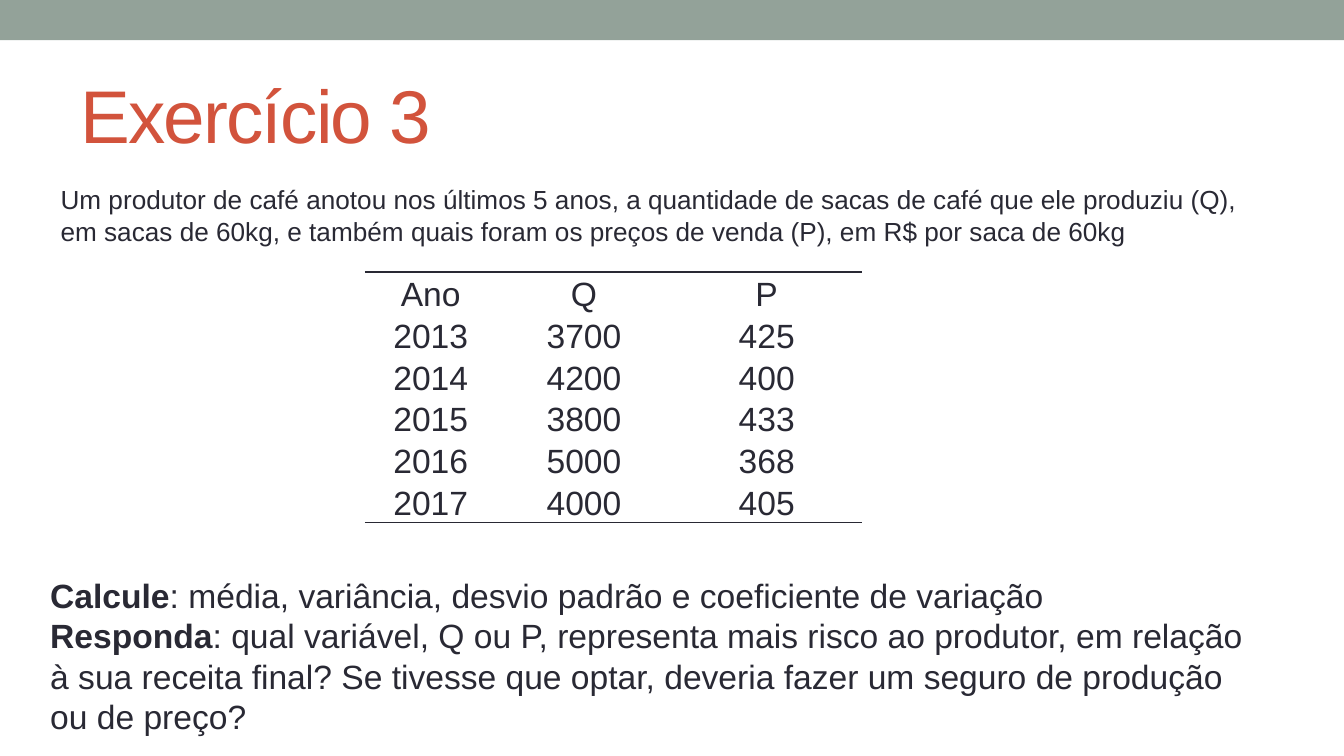
"""Build the coffee grower statistics exercise slide."""
from lxml.etree import SubElement
from pptx import Presentation
from pptx.dml.color import RGBColor as Rgb
from pptx.enum.shapes import MSO_SHAPE as Shape
from pptx.enum.text import MSO_ANCHOR as Anchor, PP_ALIGN as Align
from pptx.oxml import parse_xml
from pptx.oxml.ns import nsdecls, qn
from pptx.util import Inches, Pt

WIDE = Inches(10)
HIGH = WIDE * 9 // 16
INK, RUST, SAGE = "292934", "D2533C", "93A299"
PLAIN = "{2D5ABB26-0587-4C30-8999-92F81FD0307C}"
DATA = [
    ("Ano", "Q", "P"),
    ("2013", "3700", "425"),
    ("2014", "4200", "400"),
    ("2015", "3800", "433"),
    ("2016", "5000", "368"),
    ("2017", "4000", "405"),
]
INTRO = (
    "Um produtor de café anotou nos últimos 5 anos, a quantidade de sacas de "
    "café que ele produziu (Q), em sacas de 60kg, e também quais foram os "
    "preços de venda (P), em R$ por saca de 60kg"
)
TASKS = [
    ("Calcule", ": média, variância, desvio padrão e coeficiente de variação"),
    ("Responda", ": qual variável, Q ou P, representa mais risco ao produtor, "
     "em relação à sua receita final? Se tivesse que optar, deveria fazer um "
     "seguro de produção ou de preço?"),
]


def color(code):
    """Turn a hex string into a colour."""
    return Rgb.from_string(code)


def area(left, top, width, height):
    """Turn percentages of the slide into lengths."""
    return [round(side * part / 100) for side, part in
            zip((WIDE, HIGH, WIDE, HIGH), (left, top, width, height))]


def style(run, size, tint=INK, bold=False):
    """Set the font of a run."""
    font = run.font
    font.name, font.size, font.bold = "Arial", Pt(size), bold
    font.color.rgb = color(tint)


def add_band(slide, place):
    """Draw the plain band across the top."""
    band = slide.shapes.add_shape(Shape.RECTANGLE, *place)
    band.shadow.inherit = False
    band.fill.solid()
    band.fill.fore_color.rgb = color(SAGE)
    band.line.fill.background()


def add_text(slide, place, lines, size, tint=INK):
    """Write lines of label and body, with bold labels, and return the frame."""
    frame = slide.shapes.add_textbox(*place).text_frame
    frame.word_wrap = True
    for num, (label, body) in enumerate(lines):
        para = frame.add_paragraph() if num else frame.paragraphs[0]
        for text, bold in ((label, True), (body, False)):
            if text:
                run = para.add_run()
                run.text = text
                style(run, size, tint, bold)
    return frame


def add_rule(cell, side):
    """Draw a thin border on one side of a cell."""
    rule = parse_xml(f'<a:{side} {nsdecls("a")} w="{Pt(1)}"/>')
    fill = SubElement(rule, qn("a:solidFill"))
    SubElement(fill, qn("a:srgbClr")).set("val", INK)
    cell._tc.get_or_add_tcPr().insert(0, rule)


def fill_cell(cell, text):
    """Write centred text in a clear cell."""
    cell.fill.background()
    cell.margin_left = cell.margin_right = cell.margin_top = Inches(0.01)
    cell.margin_bottom = 0
    cell.vertical_anchor = Anchor.BOTTOM
    para = cell.text_frame.paragraphs[0]
    para.text = text
    para.alignment = Align.CENTER
    style(para.runs[0], 18)


def add_grid(slide, place, parts):
    """Build the data table with rules above and below."""
    rows, cols = len(DATA), len(parts)
    table = slide.shapes.add_table(rows, cols, *place).table
    table.first_row = table.horz_banding = False
    table._tbl.tblPr.find(qn("a:tableStyleId")).text = PLAIN
    for col, part in zip(table.columns, parts):
        col.width = round(place[2] * part / sum(parts))
    for row, texts in enumerate(DATA):
        table.rows[row].height = round(place[3] / rows)
        for col, text in enumerate(texts):
            fill_cell(table.cell(row, col), text)
    for col in range(cols):
        add_rule(table.cell(0, col), "lnT")
        add_rule(table.cell(rows - 1, col), "lnB")


def main():
    """Compose and save the slide."""
    deck = Presentation()
    deck.slide_width, deck.slide_height = WIDE, HIGH
    slide = deck.slides.add_slide(deck.slide_layouts[6])
    add_band(slide, area(0, 0, 100, 5.33))
    title = add_text(slide, area(5, 7.82, 90, 14.4),
                     [("", "Exercício 3")], 40, RUST)
    title.vertical_anchor = Anchor.MIDDLE
    title.paragraphs[0].runs[0].font._element.set("spc", "-100")
    add_text(slide, area(3.52, 23.42, 89.8, 10.13), [("", INTRO)], 14)
    add_grid(slide, area(27.15, 36.02, 37, 33.07), (0.98, 1.3, 1.42))
    add_text(slide, area(2.75, 75.2, 92.1, 23.29), TASKS, 18)
    deck.save("out.pptx")


if __name__ == "__main__":
    main()
